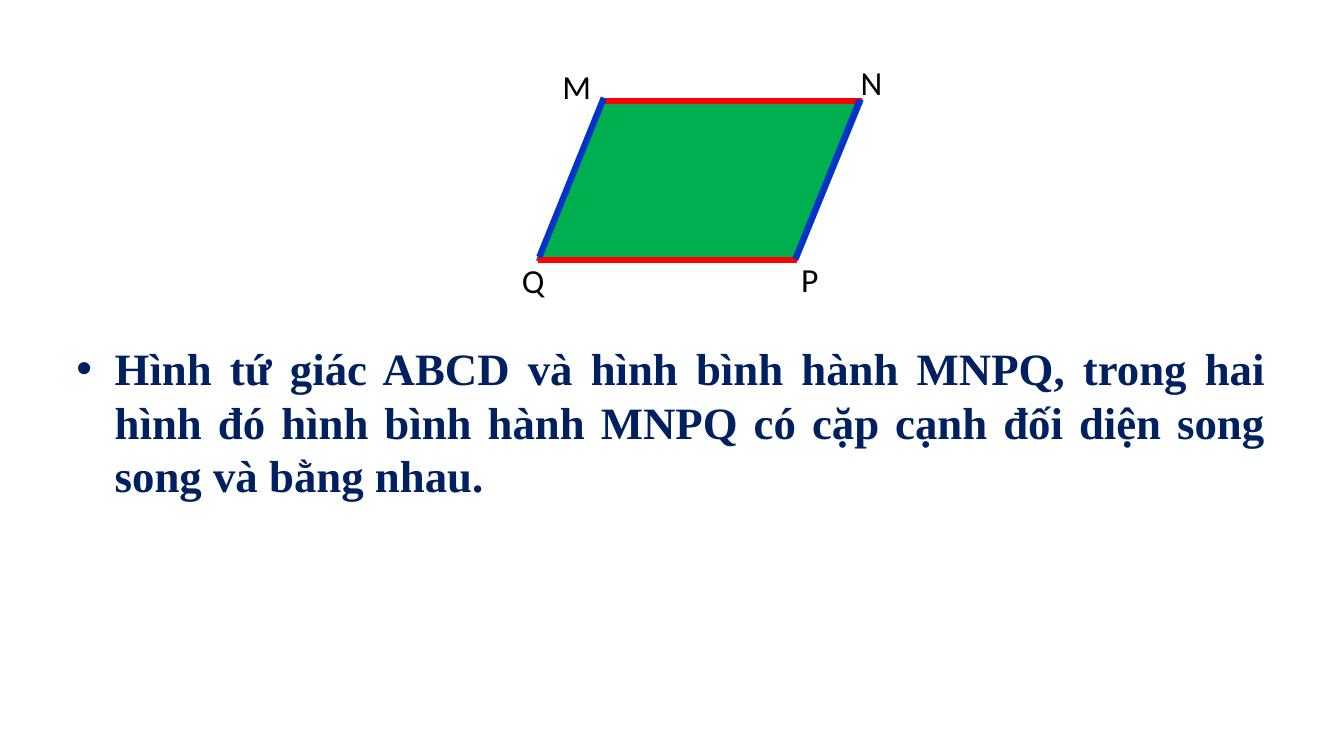
from lxml.etree import SubElement
from pptx import Presentation
from pptx.dml.color import RGBColor
from pptx.enum.shapes import MSO_CONNECTOR, MSO_SHAPE
from pptx.enum.text import PP_ALIGN
from pptx.oxml.ns import qn
from pptx.util import Inches, Pt

GREEN = RGBColor(0x00, 0xB0, 0x50)
OUTLINE = RGBColor(0x3A, 0x5F, 0x8C)
RED = RGBColor(0xFF, 0x00, 0x00)
BLUE = RGBColor(0x00, 0x33, 0xCC)
NAVY = RGBColor(0x00, 0x20, 0x60)
BLACK = RGBColor(0x00, 0x00, 0x00)


class GeometryPage:
    """Draws styled elements on one slide, placed in percent of its size."""

    label_font, body_font = "Calibri", "Times New Roman"
    label_size, body_size = Pt(24), Pt(32)
    side_width, outline_width = Pt(4.5), Pt(2)
    bullet_indent = Inches(0.38)

    def __init__(self, deck):
        self.width, self.height = deck.slide_width, deck.slide_height
        self.shapes = deck.slides.add_slide(deck.slide_layouts[6]).shapes

    def place(self, *shares):
        sizes = (self.width, self.height) * (len(shares) // 2)
        return [round(share * size / 100) for share, size in zip(shares, sizes)]

    def parallelogram(self, area, slant):
        shape = self.shapes.add_shape(MSO_SHAPE.PARALLELOGRAM, *self.place(*area))
        shape.adjustments[0] = slant
        shape.shadow.inherit = False
        shape.fill.solid()
        shape.fill.fore_color.rgb = GREEN
        shape.line.color.rgb = OUTLINE
        shape.line.width = self.outline_width

    def side(self, start, end, color):
        line = self.shapes.add_connector(MSO_CONNECTOR.STRAIGHT, *self.place(*start, *end))
        line.line.color.rgb = color
        line.line.width = self.side_width
        SubElement(line._element.spPr, qn("a:effectLst"))

    def text(self, area, words, font, size, color, bold=False):
        box = self.shapes.add_textbox(*self.place(*area))
        box.text_frame.word_wrap = True
        box.text_frame.text = words
        para = box.text_frame.paragraphs[0]
        span = para.runs[0].font
        span.name, span.size, span.bold = font, size, bold
        span.color.rgb = color
        return para

    def vertex(self, name, left, top):
        self.text((left, top, 3.75, 6.67), name, self.label_font, self.label_size, BLACK)

    def bullet(self, area, words):
        para = self.text(area, words, self.body_font, self.body_size, NAVY, True)
        para.alignment = PP_ALIGN.JUSTIFY
        properties = para._p.get_or_add_pPr()
        properties.set("marL", str(self.bullet_indent))
        properties.set("indent", str(-self.bullet_indent))
        before = SubElement(properties, qn("a:spcBef"))
        SubElement(before, qn("a:spcPct"), val="20000")
        SubElement(properties, qn("a:buFont"), typeface="Arial")
        SubElement(properties, qn("a:buChar"), char="•")


def main():
    deck = Presentation()
    deck.slide_width, deck.slide_height = Inches(13.33), Inches(7.5)
    page = GeometryPage(deck)
    page.parallelogram((40, 13.33, 24.15, 21.07), 0.41)
    vertices = {"M": (41.1, 8), "N": (63.3, 7.47), "P": (58.88, 33.6), "Q": (38.1, 33.73)}
    for name, corner in vertices.items():
        page.vertex(name, *corner)
    for left, top in ((44.86, 13.33), (40, 34.4)):
        page.side((left, top), (left + 19.3, top), RED)
    for left, top in ((44.93, 12.93), (63.98, 13.2)):
        page.side((left, top), (left - 4.8, top + 21.07), BLUE)
    page.bullet(
        (4.95, 44.4, 90, 31.47),
        "Hình tứ giác ABCD và hình bình hành MNPQ, trong hai hình đó hình bình hành MNPQ "
        "có cặp cạnh đối diện song song và bằng nhau.",
    )
    deck.save("out.pptx")


if __name__ == "__main__":
    main()
